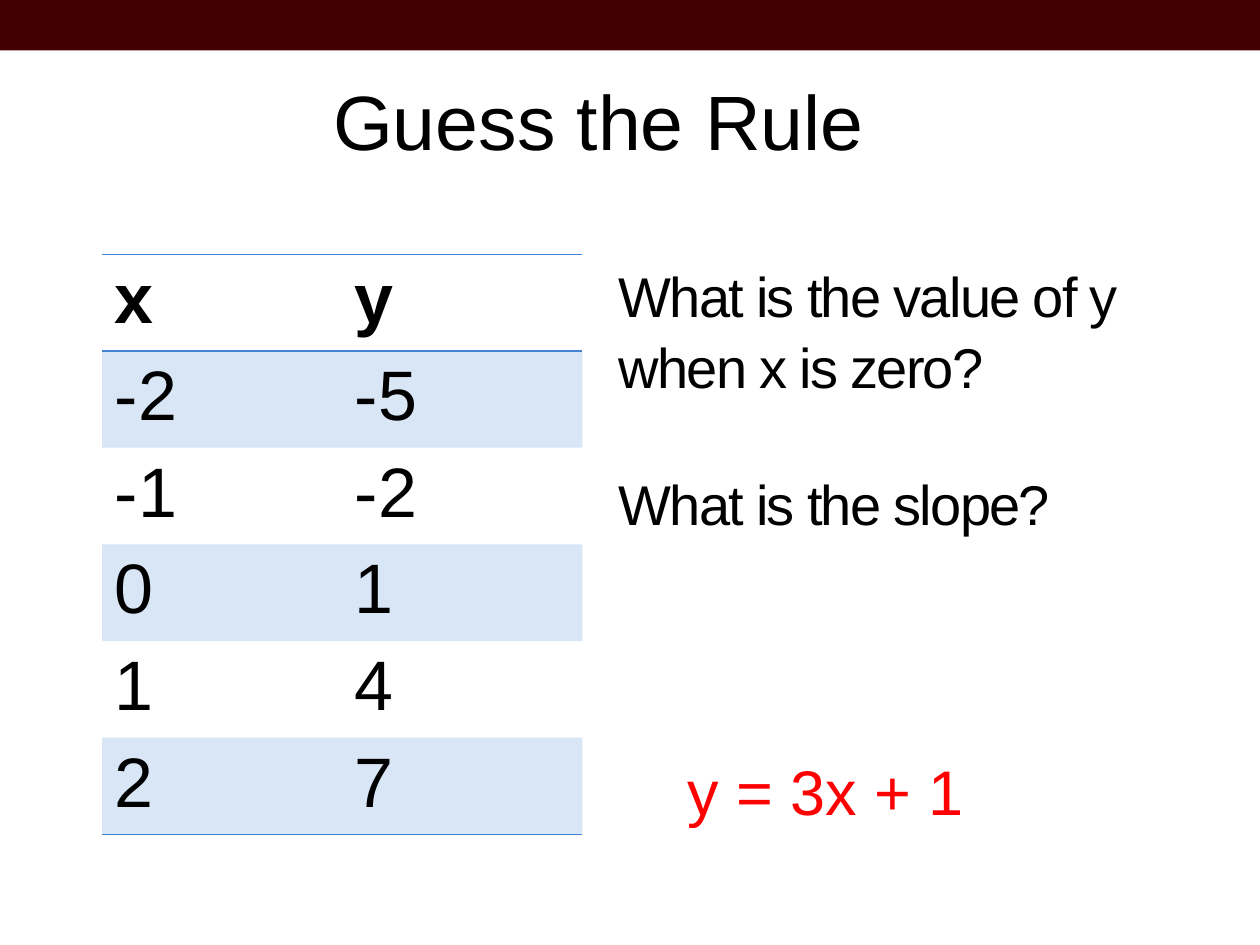
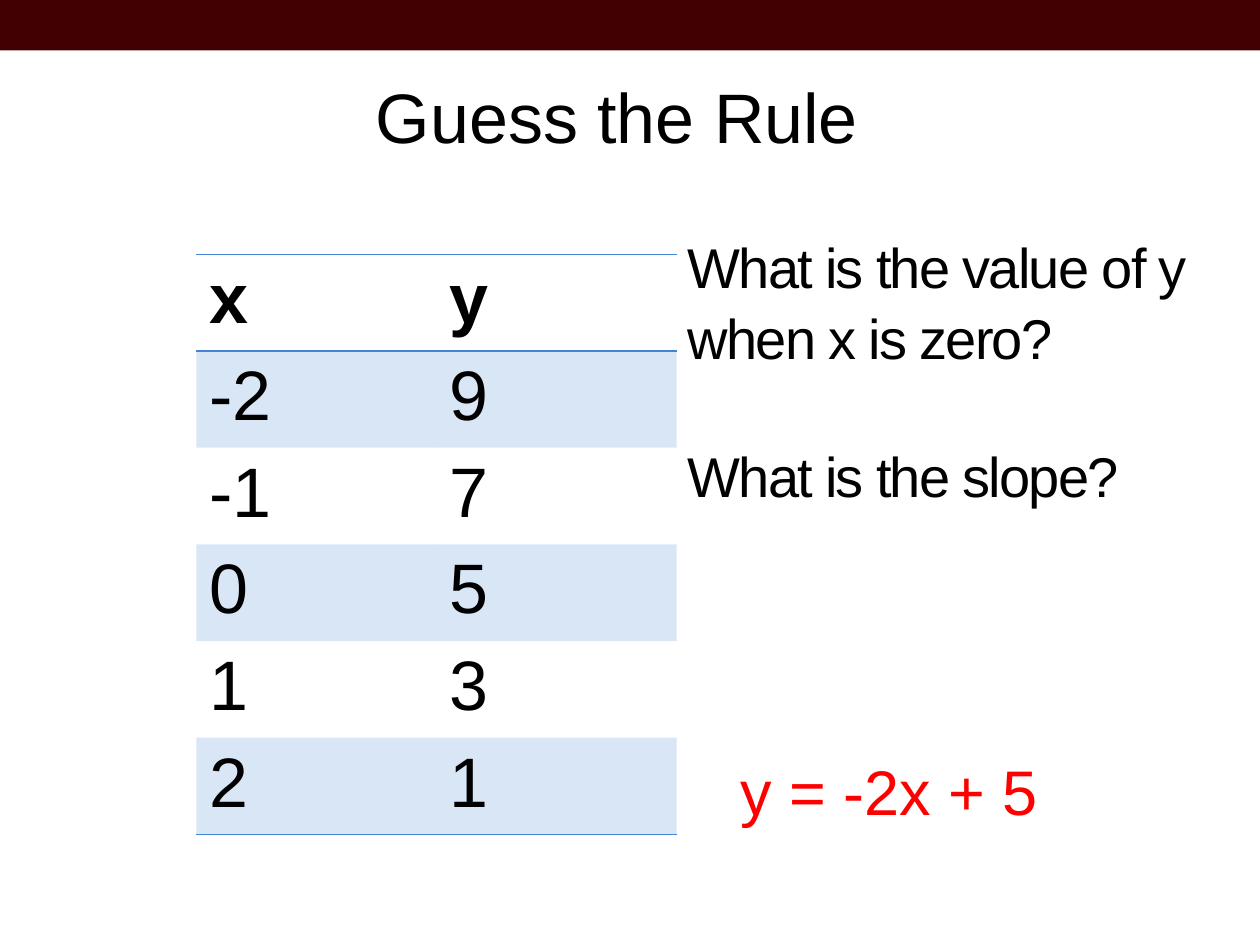
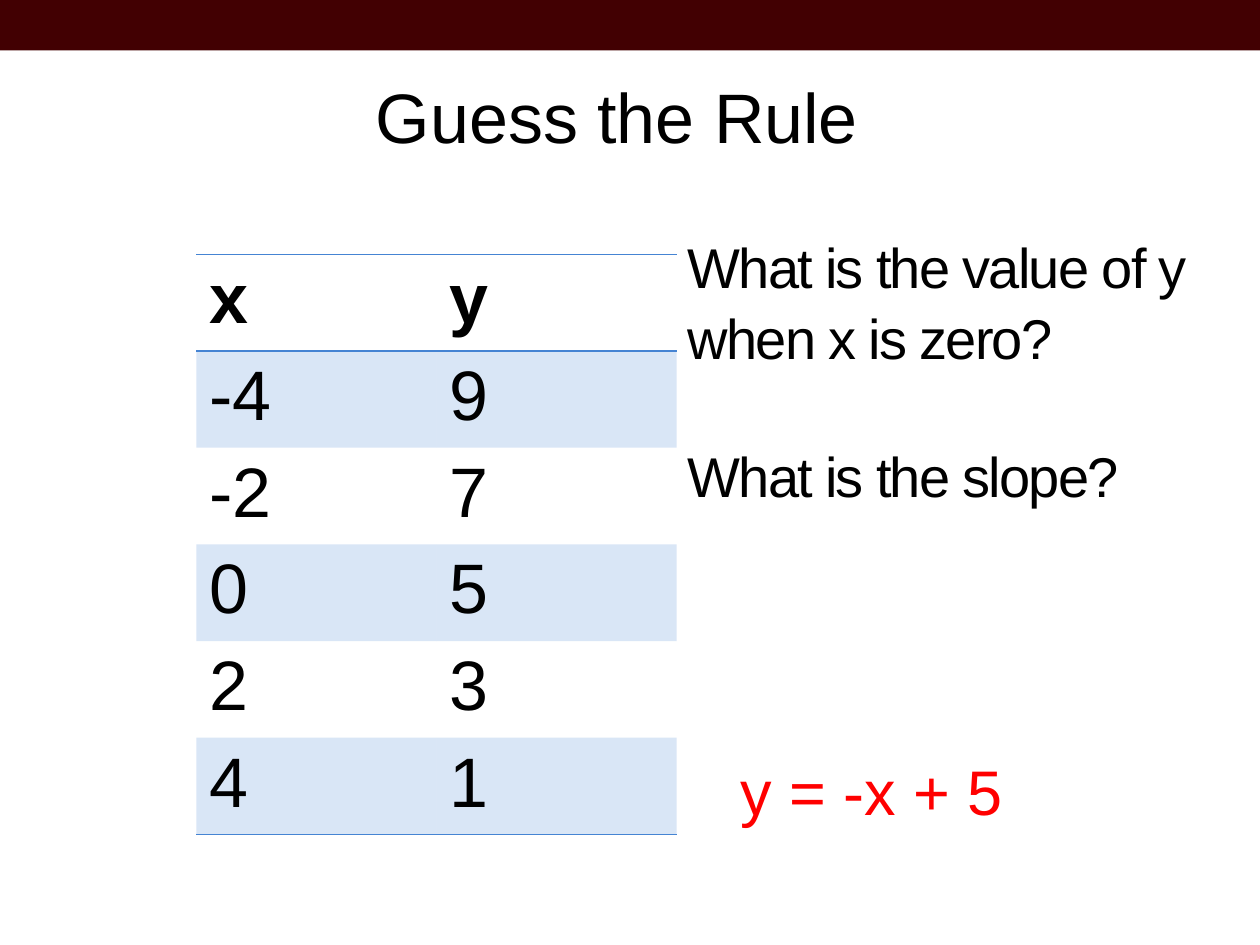
from dataclasses import dataclass

from lxml import etree
from pptx import Presentation
from pptx.dml.color import RGBColor
from pptx.enum.shapes import MSO_SHAPE
from pptx.enum.text import PP_ALIGN
from pptx.oxml.ns import qn
from pptx.util import Cm, Pt

RECT = MSO_SHAPE.RECTANGLE
LEFT, MID = PP_ALIGN.LEFT, PP_ALIGN.CENTER
PLAIN = "{2D5ABB26-0587-4C30-8999-92F81FD0307C}"  # table style without grid


@dataclass(frozen=True)
class Theme:
    font: str = "Arial"
    ink: str = "000000"
    band: str = "420002"
    rule: str = "4584D3"
    answer: str = "FF0000"
    tint: int = 20  # percent opacity of striped rows
    cell: int = 40
    formula: int = 36
    ask: int = 32


@dataclass(frozen=True)
class Frame:
    """Places, in centimetres, that differ between the slide layouts."""
    title: tuple
    size: int
    table: float
    asks: tuple
    formula: float


THEME = Theme()
WIDE = Frame((5.16, 1.35, 13.82, 2.13), 44, 2.06, (12.22, 5.08), 13.61)
SLIM = Frame((7.14, 1.35, 10.59, 1.96), 40, 3.96, (13.61, 4.5), 14.68)

TITLE = "Guess the Rule"
ASKS = ["What is the value of y when x is zero?", "What is the slope?"]
RULES = [
    (WIDE, [(-2, -5), (-1, -2), (0, 1), (1, 4), (2, 7)], "y = 3x + 1"),
    (SLIM, [(-2, 9), (-1, 7), (0, 5), (1, 3), (2, 1)], "y = -2x + 5"),
    (SLIM, [(-4, 9), (-2, 7), (0, 5), (2, 3), (4, 1)], "y = -x + 5"),
]


def add_run(para, text, size, color=THEME.ink, bold=False):
    run = para.add_run()
    run.text = text
    font = run.font
    font.name, font.size, font.bold = THEME.font, Pt(size), bold
    font.color.rgb = RGBColor.from_string(color)
    return run


def add_band(slide):
    band = slide.shapes.add_shape(RECT, 0, 0, Cm(25.4), Cm(1.02))
    band.shadow.inherit = False
    band.fill.solid()
    band.fill.fore_color.rgb = RGBColor.from_string(THEME.band)
    band.line.fill.background()


def add_box(slide, place):
    box = slide.shapes.add_textbox(*map(Cm, place))
    box.text_frame.word_wrap = True
    return box.text_frame


def add_line(slide, place, text, size, color=THEME.ink, align=LEFT):
    para = add_box(slide, place).paragraphs[0]
    para.alignment = align
    add_run(para, text, size, color)


def add_asks(slide, spot):
    """Questions set tight, with one line of space between them."""
    frame = add_box(slide, (*spot, 12.7, 2.41))
    for i, text in enumerate(ASKS):
        para = frame.add_paragraph() if i else frame.paragraphs[0]
        para.line_spacing = 1.05
        para.space_before = Pt(38.5 if i else 0)
        run = add_run(para, text, THEME.ask)
        run.font._element.set("spc", "-100")


def add_edge(cell, side):
    props = cell._tc.get_or_add_tcPr()
    edge = etree.SubElement(props, qn(f"a:ln{side}"), w=str(Pt(1)))
    fill = etree.SubElement(edge, qn("a:solidFill"))
    etree.SubElement(fill, qn("a:srgbClr"), val=THEME.rule)


def fill_cell(cell, tinted):
    if not tinted:
        cell.fill.background()
        return
    cell.fill.solid()
    cell.fill.fore_color.rgb = RGBColor.from_string(THEME.rule)
    color = cell._tc.tcPr.find(f"{qn('a:solidFill')}/{qn('a:srgbClr')}")
    etree.SubElement(color, qn("a:alpha"), val=str(THEME.tint * 1000))


def add_pairs(slide, left, pairs):
    rows = [("x", "y"), *pairs]
    last = len(rows) - 1
    shape = slide.shapes.add_table(
        len(rows), 2, Cm(left), Cm(5.13), Cm(9.68), Cm(11.68))
    table = shape.table
    table.horz_banding = False
    table._tbl.tblPr.find(qn("a:tableStyleId")).text = PLAIN
    for r, row in enumerate(rows):
        for c, value in enumerate(row):
            cell = table.cell(r, c)
            if r == 0:
                add_edge(cell, "T")
            if r in (0, last):
                add_edge(cell, "B")
            fill_cell(cell, r % 2 == 1)
            para = cell.text_frame.paragraphs[0]
            add_run(para, str(value), THEME.cell, bold=r == 0)


def main():
    deck = Presentation()
    deck.slide_width, deck.slide_height = Cm(25.4), Cm(19.05)
    for frame, pairs, formula in RULES:
        slide = deck.slides.add_slide(deck.slide_layouts[6])
        add_band(slide)
        add_line(slide, frame.title, TITLE, frame.size, align=MID)
        add_pairs(slide, frame.table, pairs)
        add_line(slide, (frame.formula, 15.04, 13.69, 1.8), formula,
                 THEME.formula, THEME.answer)
        add_asks(slide, frame.asks)
    deck.save("out.pptx")


if __name__ == "__main__":
    main()
